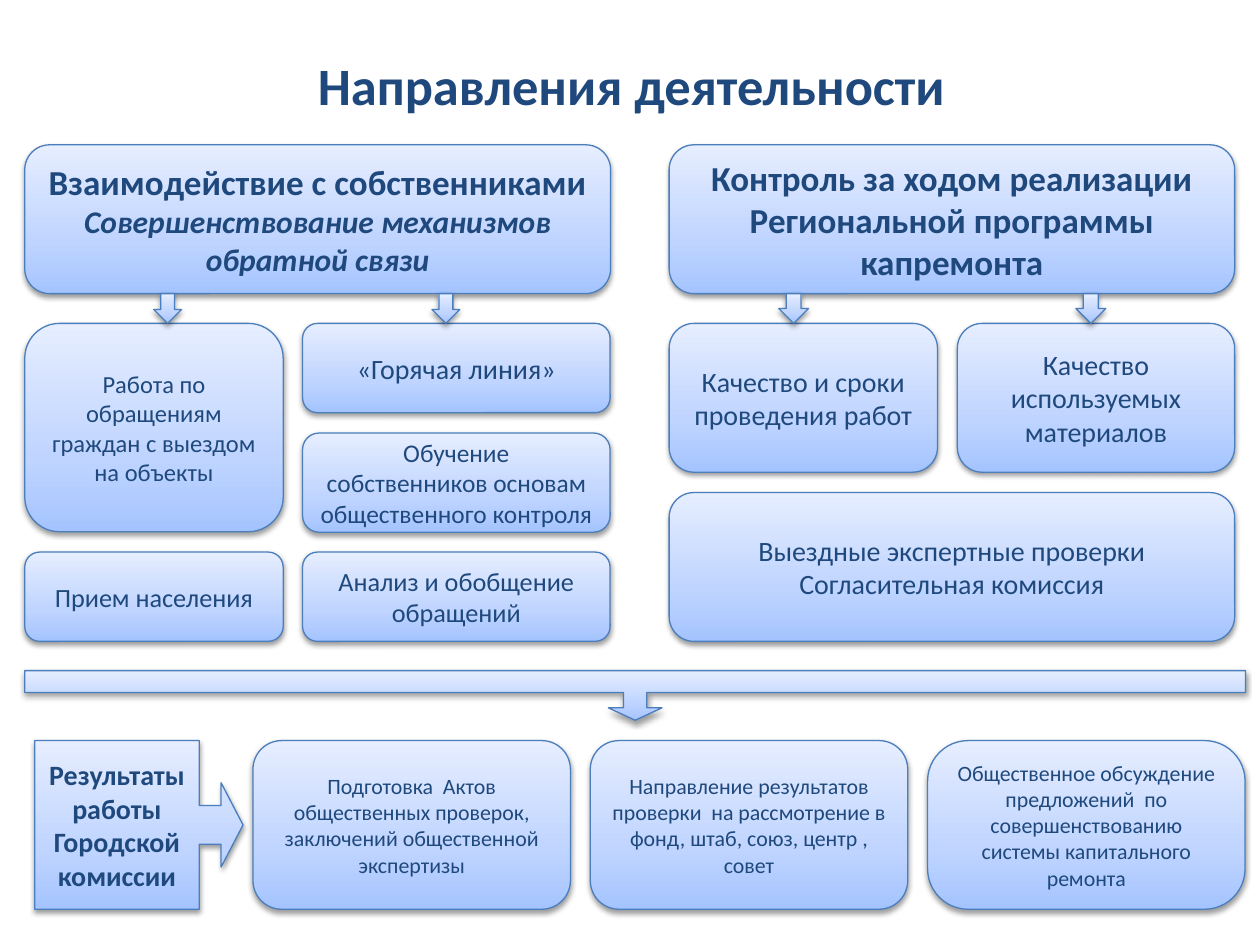
from copy import deepcopy

from lxml import etree
from pptx import Presentation
from pptx.dml.color import RGBColor
from pptx.enum.shapes import MSO_SHAPE
from pptx.enum.text import MSO_ANCHOR, PP_ALIGN
from pptx.oxml.ns import qn
from pptx.util import Cm, Pt

ROUND = MSO_SHAPE.ROUNDED_RECTANGLE
DOWN = MSO_SHAPE.DOWN_ARROW
RIGHT_CALL = MSO_SHAPE.RIGHT_ARROW_CALLOUT
DOWN_CALL = MSO_SHAPE.DOWN_ARROW_CALLOUT
MIDDLE = MSO_ANCHOR.MIDDLE
CENTER = PP_ALIGN.CENTER

FONT = "Calibri"
COLORS = {
    "text": "1F497D",
    "line": "4B7EBC",
    "deep": "A4C4FF",
    "mid": "BFD4FF",
    "pale": "E6EEFF",
    "shade": "000000",
}
STOPS = [(0, "deep"), (0.35, "mid"), (1, "pale")]

LEFT, RIGHT = 0.5, 13.49
INNER = 6.1
HEAD_TOP, HEAD_HIGH = 2.92, 3
ARROW = 0.6
ROW = HEAD_TOP + HEAD_HIGH + ARROW
LOW_ROW = 11.13
END_TOP, END_HIGH = 14.93, 3.4
END_LEFT, END_WIDE, END_STEP = 5.1, 6.4, 6.8

HEADS = [
    (LEFT, 11.81, "Взаимодействие с собственниками",
     "Совершенствование механизмов обратной связи"),
    (RIGHT, 11.4,
     "Контроль за ходом реализации\vРегиональной программы капремонта", ""),
]
TASKS = [
    (LEFT, ROW, 5.21, 4.2, 14,
     "Работа по обращениям граждан с выездом на объекты"),
    (INNER, ROW, 6.2, 1.8, 16, "«Горячая линия»"),
    (INNER, 8.73, 6.2, 2, 14.5,
     "Обучение\nсобственников основам общественного контроля"),
    (LEFT, LOW_ROW, 5.21, 1.8, 15, "Прием населения"),
    (INNER, LOW_ROW, 6.2, 1.8, 15, "Анализ и обобщение обращений"),
    (RIGHT, ROW, 5.41, 3, 16, "Качество и сроки проведения работ"),
    (19.3, ROW, 5.59, 3, 16, "Качество используемых материалов"),
    (RIGHT, 9.93, 11.4, 3, 16,
     "Выездные экспертные проверки\nСогласительная комиссия"),
]
ARROWS = [(3.1, 0.56), (8.71, 0.56), (15.7, ARROW), (21.69, ARROW)]
ENDS = [
    ("Подготовка  Актов общественных проверок, "
     "заключений общественной экспертизы", 0.17),
    ("Направление результатов проверки  на рассмотрение в "
     "фонд, штаб, союз, центр , совет", 0.17),
    ("Общественное обсуждение предложений  по совершенствованию "
     "системы капитального ремонта", 0.24),
]


def color(name):
    return RGBColor.from_string(COLORS[name])


def write(frame, text, size, bold=False, slant=False):
    frame.word_wrap = True
    frame.vertical_anchor = MIDDLE
    for line in text.split("\n"):
        para = frame.paragraphs[-1]
        if para.runs:
            para = frame.add_paragraph()
        para.text = line
        para.alignment = CENTER
        for run in para.runs:
            font = run.font
            font.name, font.size = FONT, Pt(size)
            font.bold, font.italic = bold, slant
            font.color.rgb = color("text")


def shade(shape):
    shape.shadow.inherit = False
    group = shape._element.spPr.find(qn("a:effectLst"))
    outer = etree.SubElement(
        group, qn("a:outerShdw"), blurRad=str(Pt(3.1)), dist=str(Pt(1.6)),
        dir="5400000", rotWithShape="0")
    tint = etree.SubElement(outer, qn("a:srgbClr"), val=COLORS["shade"])
    etree.SubElement(tint, qn("a:alpha"), val="38000")


def blend(shape):
    shape.fill.gradient()
    shape.fill.gradient_angle = 90
    group = shape._element.spPr.find(".//" + qn("a:gsLst"))
    group.insert(1, deepcopy(group[0]))
    for stop, (place, name) in zip(shape.fill.gradient_stops, STOPS):
        stop.position = place
        stop.color.rgb = color(name)


def block(slide, kind, left, top, wide, high, adjust=()):
    shape = slide.shapes.add_shape(kind, Cm(left), Cm(top), Cm(wide), Cm(high))
    for index, value in enumerate(adjust):
        shape.adjustments[index] = value
    shade(shape)
    blend(shape)
    shape.line.color.rgb = color("line")
    shape.line.width = Pt(0.75)
    return shape


def title(slide, text):
    shape = slide.shapes.title
    shape.left, shape.top = Cm(1.3), Cm(0.9)
    shape.width, shape.height = Cm(22.86), Cm(1.6)
    write(shape.text_frame, text, 30, bold=True)


def main():
    deck = Presentation()
    deck.slide_width, deck.slide_height = Cm(25.4), Cm(19.05)
    slide = deck.slides.add_slide(deck.slide_layouts[5])
    title(slide, "Направления деятельности")

    for left, wide, text, note in HEADS:
        head = block(slide, ROUND, left, HEAD_TOP, wide, HEAD_HIGH)
        write(head.text_frame, text, 20, bold=True)
        if note:
            write(head.text_frame, note, 18, bold=True, slant=True)

    for left, top, wide, high, size, text in TASKS:
        task = block(slide, ROUND, left, top, wide, high)
        write(task.text_frame, text, size)

    for left, wide in ARROWS:
        block(slide, DOWN, left, HEAD_TOP + HEAD_HIGH, wide, ARROW)

    block(slide, DOWN_CALL, LEFT, 13.52, 24.61, 1, (0.47, 0.54, 0.25, 0.44))
    result = block(slide, RIGHT_CALL, 0.7, END_TOP, 4.2, END_HIGH,
                   (0.23, 0.25, 0.13, 0.79))
    write(result.text_frame, "Результаты работы Городской комиссии", 16,
          bold=True)

    for index, (text, curve) in enumerate(ENDS):
        end = block(slide, ROUND, END_LEFT + index * END_STEP, END_TOP,
                    END_WIDE, END_HIGH, (curve,))
        write(end.text_frame, text, 12.5)

    deck.save("out.pptx")


if __name__ == "__main__":
    main()
